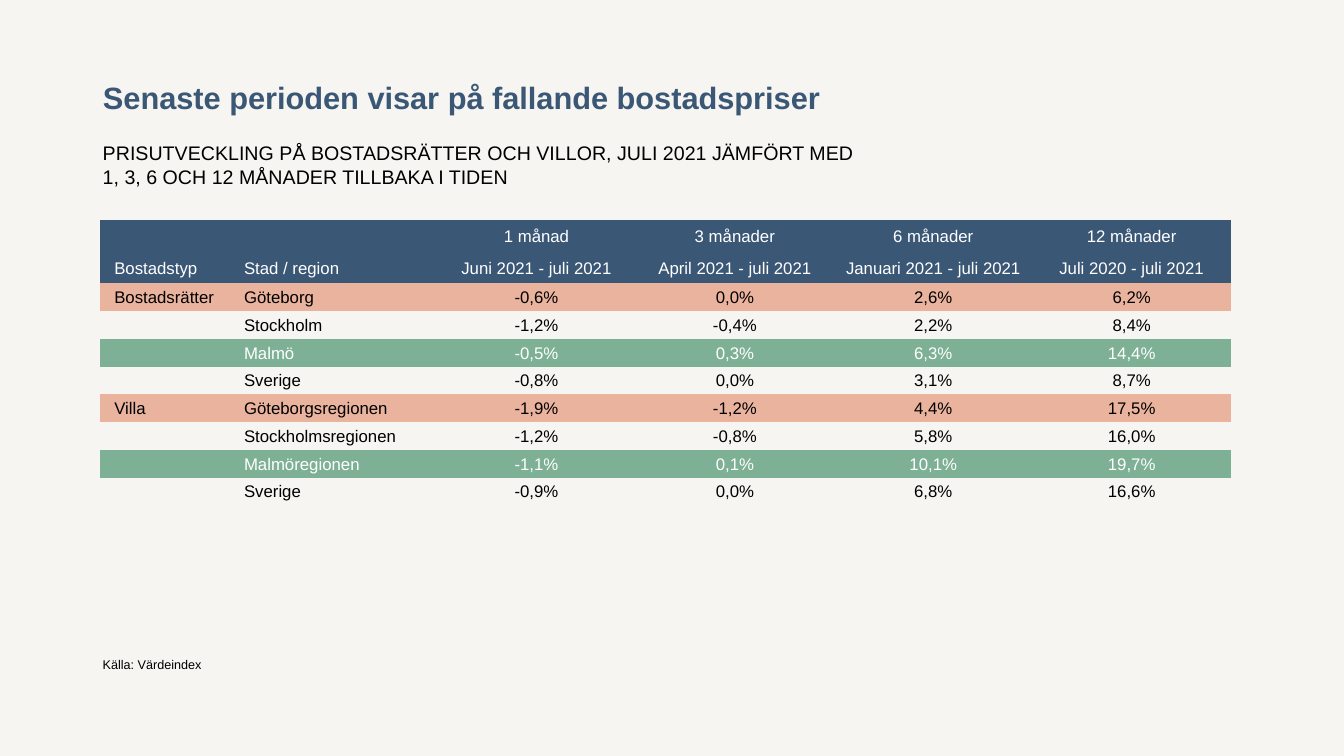
from dataclasses import dataclass

from pptx import Presentation
from pptx.dml.color import RGBColor as Rgb
from pptx.enum.text import MSO_ANCHOR as Anchor, MSO_AUTO_SIZE as AutoSize, PP_ALIGN as Align
from pptx.util import Cm, Pt


@dataclass(frozen=True)
class Theme:
    font: str = "Arial"
    paper: Rgb = Rgb(0xF6, 0xF5, 0xF1)
    navy: Rgb = Rgb(0x3B, 0x57, 0x76)
    salmon: Rgb = Rgb(0xEA, 0xB3, 0x9E)
    green: Rgb = Rgb(0x7D, 0xB0, 0x94)
    black: Rgb = Rgb(0, 0, 0)
    white: Rgb = Rgb(255, 255, 255)
    title_size: Pt = Pt(22)
    subtitle_size: Pt = Pt(14)
    table_size: Pt = Pt(12)
    source_size: Pt = Pt(9)


THEME = Theme()
PLAIN_TABLE_STYLE = "{2D5ABB26-0587-4C30-8999-92F81FD0307C}"

HEADER_ROWS = [
    ["", "", "1 månad", "3 månader", "6 månader", "12 månader"],
    ["Bostadstyp", "Stad / region", "Juni 2021 - juli 2021", "April 2021 - juli 2021",
     "Januari 2021 - juli 2021", "Juli 2020 - juli 2021"],
]
PRICE_ROWS = [
    ["Bostadsrätter", "Göteborg", "-0,6%", "0,0%", "2,6%", "6,2%"],
    ["", "Stockholm", "-1,2%", "-0,4%", "2,2%", "8,4%"],
    ["", "Malmö", "-0,5%", "0,3%", "6,3%", "14,4%"],
    ["", "Sverige", "-0,8%", "0,0%", "3,1%", "8,7%"],
    ["Villa", "Göteborgsregionen", "-1,9%", "-1,2%", "4,4%", "17,5%"],
    ["", "Stockholmsregionen", "-1,2%", "-0,8%", "5,8%", "16,0%"],
    ["", "Malmöregionen", "-1,1%", "0,1%", "10,1%", "19,7%"],
    ["", "Sverige", "-0,9%", "0,0%", "6,8%", "16,6%"],
]
# Fill and text colour for each region, repeating per housing type
REGION_STYLES = [
    (THEME.salmon, THEME.black),
    (None, THEME.black),
    (THEME.green, THEME.white),
    (None, THEME.black),
]


def write(para, text, size, color, align=Align.LEFT, bold=False):
    para.text = text
    para.alignment = align
    para.font.name = THEME.font
    para.font.size = size
    para.font.color.rgb = color
    para.font.bold = bold


def place_title(page, left, top, width, height, text):
    title = page.shapes.title
    title.left, title.top, title.width, title.height = left, top, width, height
    frame = title.text_frame
    frame.auto_size = AutoSize.NONE
    frame.vertical_anchor = Anchor.BOTTOM
    para = frame.paragraphs[0]
    write(para, text, THEME.title_size, THEME.navy, bold=True)
    para.line_spacing = Pt(31)


def add_text(page, left, top, width, height, text, size, anchor=Anchor.TOP):
    frame = page.shapes.add_textbox(left, top, width, height).text_frame
    frame.word_wrap = True
    frame.vertical_anchor = anchor
    write(frame.paragraphs[0], text, size, THEME.black)


def fill_cell(cell, column, text, fill, color):
    if fill is None:
        cell.fill.background()
    else:
        cell.fill.solid()
        cell.fill.fore_color.rgb = fill
    cell.vertical_anchor = Anchor.MIDDLE
    cell.margin_left = Cm(0.36) if column == 0 else Cm(0.13)
    cell.margin_right = Cm(0.13)
    cell.margin_top = cell.margin_bottom = 0
    para = cell.text_frame.paragraphs[0]
    write(para, text, THEME.table_size, color, Align.LEFT if column < 2 else Align.CENTER)
    para.line_spacing = 1.07
    if not text:
        # An empty cell keeps its row low only through its end mark
        para._p.get_or_add_endParaRPr().set("sz", str(int(THEME.table_size.pt * 100)))


def add_price_table(page, left, top, width, height):
    rows = HEADER_ROWS + PRICE_ROWS
    frame = page.shapes.add_table(len(rows), len(rows[0]), left, top, width, height)
    table = frame.table
    table.first_row = table.horz_banding = False
    table._tbl.tblPr.find("{*}tableStyleId").text = PLAIN_TABLE_STYLE

    for index, column in enumerate(table.columns):
        column.width = Cm(3.5) if index == 0 else Cm(5)
    for index, texts in enumerate(rows):
        region = index - len(HEADER_ROWS)
        if region < 0:
            table.rows[index].height = Cm(0.8)
            fill, color = THEME.navy, THEME.white
        else:
            table.rows[index].height = Cm(0.7)
            fill, color = REGION_STYLES[region % len(REGION_STYLES)]
        for column, text in enumerate(texts):
            fill_cell(table.cell(index, column), column, text, fill, color)


def build_price_page(deck):
    page = deck.slides.add_slide(deck.slide_layouts[5])
    page.background.fill.solid()
    page.background.fill.fore_color.rgb = THEME.paper
    left = Cm(2.34)

    # Heading
    place_title(page, left, Cm(1.02), Cm(29.2), Cm(2.03),
                "Senaste perioden visar på fallande bostadspriser")
    add_text(page, left, Cm(3.43), Cm(19.76), Cm(1.3),
             "PRISUTVECKLING PÅ BOSTADSRÄTTER OCH VILLOR, JULI 2021 JÄMFÖRT MED "
             "1, 3, 6 OCH 12 MÅNADER TILLBAKA I TIDEN", THEME.subtitle_size)

    # Price changes
    add_price_table(page, Cm(2.52), Cm(5.54), Cm(28.5), Cm(7.2))

    # Source line
    add_text(page, left, Cm(16.43), Cm(27.4), Cm(0.64),
             "Källa: Värdeindex", THEME.source_size, Anchor.BOTTOM)


def main():
    deck = Presentation()
    deck.slide_width, deck.slide_height = Cm(33.87), Cm(19.05)
    build_price_page(deck)
    deck.save("out.pptx")


if __name__ == "__main__":
    main()
